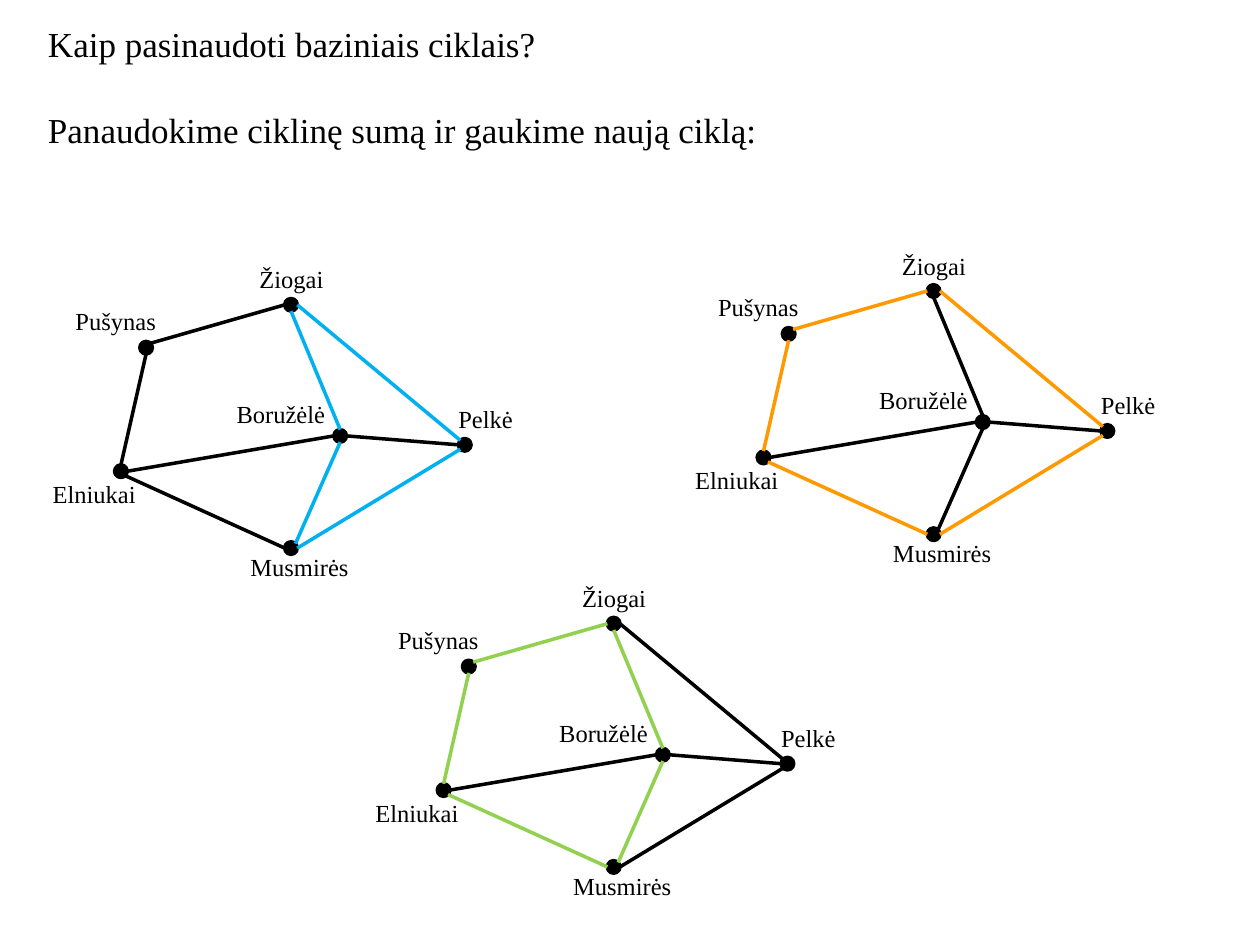
from math import sqrt

from lxml.etree import SubElement
from pptx import Presentation
from pptx.dml.color import RGBColor
from pptx.enum.shapes import MSO_CONNECTOR as CONN, MSO_SHAPE as SHAPE
from pptx.enum.text import MSO_ANCHOR as ANCHOR, MSO_AUTO_SIZE as AUTOSIZE, PP_ALIGN as ALIGN
from pptx.oxml.ns import qn
from pptx.util import Pt

FONT = "Times New Roman"
COLORS = {"black": "000000", "blue": "00B0F0", "orange": "FF9900", "green": "92D050"}
RADIUS = 3.6
LINE_WIDTH = 2
LABEL_HEIGHT = 24.2

# Positions are relative to the graph's top left corner:
# dot centre x, y, then label left, top, width
VERTICES = {
    "Pušynas": ((60.5, 51.1), (13, 23.8, 90)),
    "Žiogai": ((143.3, 26.6), (118.1, 0, 113.8)),
    "Boružėlė": ((171.4, 101.5), (105.1, 77, 69.8)),
    "Elniukai": ((46.1, 121.7), (0, 122.4, 61.9)),
    "Musmirės": ((143.3, 165.6), (113, 164.2, 110.9)),
    "Pelkė": ((242.6, 106.6), (231.8, 79.9, 71.3)),
}

# Direction from a dot's centre to the point where an edge meets it
DIAG = sqrt(0.5)
SITES = {
    "top": (0, -1), "bottom": (0, 1), "left": (-1, 0), "right": (1, 0),
    "top left": (-DIAG, -DIAG), "top right": (DIAG, -DIAG),
    "bottom left": (-DIAG, DIAG), "bottom right": (DIAG, DIAG),
}

EDGES = [
    ("Elniukai", "top", "Pušynas", "bottom"),
    ("Pušynas", "top right", "Žiogai", "left"),
    ("Elniukai", "right", "Boružėlė", "left"),
    ("Boružėlė", "top", "Žiogai", "bottom"),
    ("Elniukai", "bottom right", "Musmirės", "left"),
    ("Žiogai", "right", "Pelkė", "top left"),
    ("Musmirės", "right", "Pelkė", "bottom left"),
    ("Musmirės", "top right", "Boružėlė", "bottom"),
    ("Boružėlė", "right", "Pelkė", "left"),
]

# Graph left, top, cycle colour, vertices of the cycle in order
GRAPHS = [
    (207.4, 329.8, "green", ["Elniukai", "Pušynas", "Žiogai", "Boružėlė", "Musmirės"]),
    (390.2, 139.7, "orange", ["Elniukai", "Pušynas", "Žiogai", "Pelkė", "Musmirės"]),
    (23, 147.6, "blue", ["Žiogai", "Pelkė", "Musmirės", "Boružėlė"]),
]


def rgb(name):
    return RGBColor.from_string(COLORS[name])


def format_runs(tf, size):
    for p in tf.paragraphs:
        p.alignment = ALIGN.LEFT
        for r in p.runs:
            r.font.name = FONT
            r.font.size = Pt(size)
            r.font.color.rgb = rgb("black")


def set_title(slide):
    sp = slide.shapes.title
    sp.left, sp.top, sp.width, sp.height = Pt(20.2), Pt(9.4), Pt(657.4), Pt(80)
    tf = sp.text_frame
    tf.word_wrap = True
    tf.auto_size = AUTOSIZE.NONE
    tf.vertical_anchor = ANCHOR.TOP
    tf.text = "Kaip pasinaudoti baziniais ciklais?"
    p = tf.add_paragraph()
    p.text = "Panaudokime ciklinę sumą ir gaukime naują ciklą:"
    p.space_before = Pt(25)
    format_runs(tf, 20)


def add_dot(shapes, x, y):
    sp = shapes.add_shape(SHAPE.OVAL, Pt(x - RADIUS), Pt(y - RADIUS),
                          Pt(2 * RADIUS), Pt(2 * RADIUS))
    sp.shadow.inherit = False
    sp.fill.solid()
    sp.fill.fore_color.rgb = rgb("black")
    sp.line.color.rgb = rgb("black")
    sp.line.width = Pt(LINE_WIDTH)


def add_edge(shapes, start, end, color):
    line = shapes.add_connector(CONN.STRAIGHT, *(Pt(v) for v in start + end))
    line.line.color.rgb = rgb(color)
    line.line.width = Pt(LINE_WIDTH)
    SubElement(line._element.spPr, qn("a:effectLst"))


def add_label(shapes, text, x, y, width):
    tf = shapes.add_textbox(Pt(x), Pt(y), Pt(width), Pt(LABEL_HEIGHT)).text_frame
    tf.word_wrap = True
    tf.text = text
    format_runs(tf, 14)


def add_graph(slide, left, top, color, cycle):
    """Draw the whole graph as a group, with the edges of the cycle in color."""
    shapes = slide.shapes.add_group_shape().shapes
    cycle_edges = {frozenset(pair) for pair in zip(cycle, cycle[1:] + cycle[:1])}

    def meeting_point(vertex, site):
        (x, y), _ = VERTICES[vertex]
        dx, dy = SITES[site]
        return left + x + RADIUS * dx, top + y + RADIUS * dy

    for (x, y), _ in VERTICES.values():
        add_dot(shapes, left + x, top + y)
    for a, site_a, b, site_b in EDGES:
        edge_color = color if frozenset((a, b)) in cycle_edges else "black"
        add_edge(shapes, meeting_point(a, site_a), meeting_point(b, site_b), edge_color)
    for name, (_, (x, y, width)) in VERTICES.items():
        add_label(shapes, name, left + x, top + y, width)


def main():
    prs = Presentation()
    prs.slide_width, prs.slide_height = Pt(720), Pt(540)
    slide = prs.slides.add_slide(prs.slide_layouts[5])
    set_title(slide)
    for graph in GRAPHS:
        add_graph(slide, *graph)
    prs.save("out.pptx")


if __name__ == "__main__":
    main()
